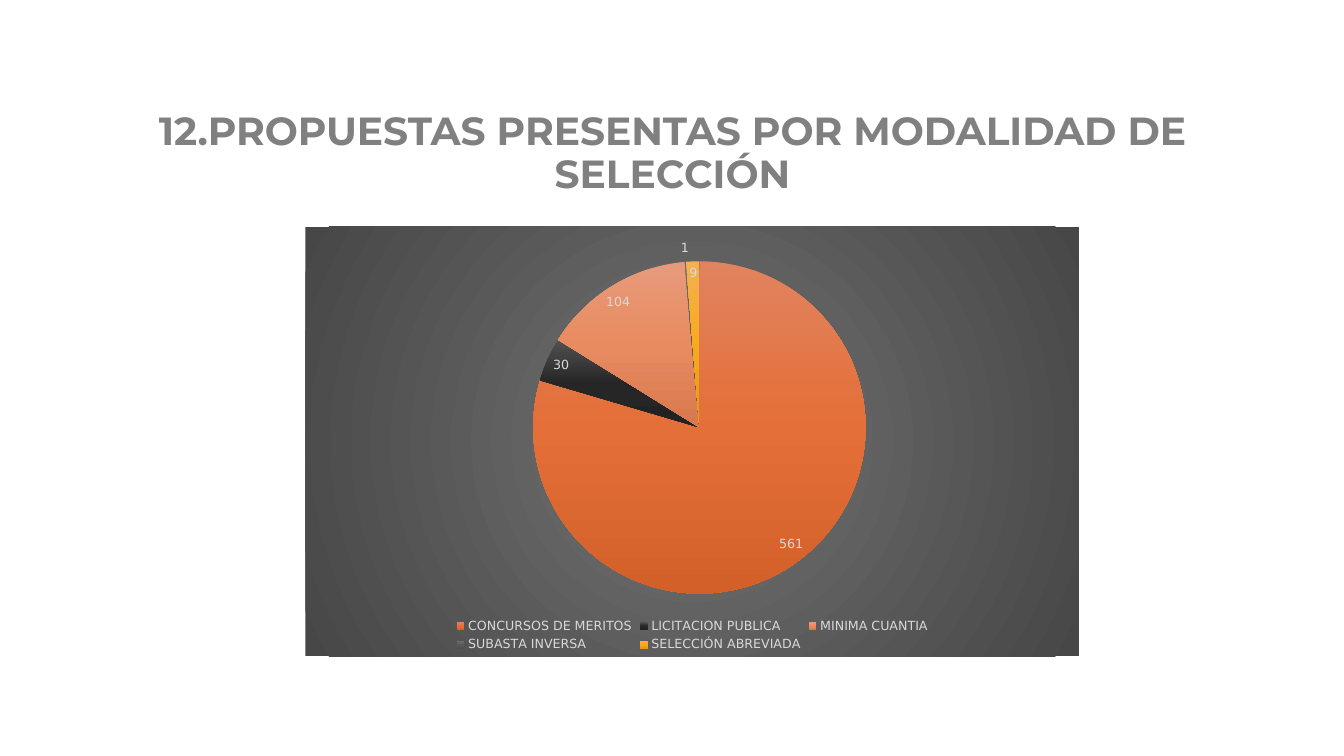
from lxml import etree
from pptx import Presentation
from pptx.chart.data import CategoryChartData
from pptx.dml.color import RGBColor
from pptx.enum import chart as charts, text
from pptx.oxml import parse_xml
from pptx.oxml.ns import nsdecls, qn
from pptx.util import Inches, Pt

TITLE_FONT = "Montserrat"
CHART_FONT = "DejaVu Sans"
LABEL_COLOR = "D9D9D9"

# Proposals and slice gradient (top, middle, bottom) for each modality
MODALITIES = [
    ("CONCURSOS DE MERITOS", 561, ("E1835F", "E46F38", "D36029")),
    ("LICITACION PUBLICA", 30, ("515151", "262626", "222222")),
    ("MINIMA CUANTIA", 104, ("E79A7B", "E98B61", "D7784F")),
    ("SUBASTA INVERSA", 1, ("6F6F6F", "595959", "4F4F4F")),
    ("SELECCIÓN ABREVIADA", 9, ("F3B152", "F9AA1B", "E59910")),
]


def color(value):
    return RGBColor.from_string(value)


def format_font(font, name, size, value, bold=False):
    font.name = name
    font.size = Pt(size)
    font.bold = bold
    font.color.rgb = color(value)


def gradient(colors, radial=False):
    """Return a gradient fill with evenly spaced stops."""
    step = 100000 // (len(colors) - 1)
    stops = "".join(
        f'<a:gs pos="{index * step}"><a:srgbClr val="{value}"/></a:gs>'
        for index, value in enumerate(colors)
    )
    if radial:
        direction = ('<a:path path="circle"><a:fillToRect l="50000" t="50000" '
                     'r="50000" b="50000"/></a:path>')
    else:
        direction = '<a:lin ang="5400000" scaled="0"/>'
    return parse_xml(f'<a:gradFill {nsdecls("a")} rotWithShape="1">'
                     f'<a:gsLst>{stops}</a:gsLst>{direction}</a:gradFill>')


def set_title(page, words):
    title = page.shapes.title
    title.left, title.top = Inches(0.92), Inches(0.99)
    title.width, title.height = Inches(11.5), Inches(1.01)
    frame = title.text_frame
    frame.word_wrap = True
    frame.auto_size = text.MSO_AUTO_SIZE.NONE
    frame.vertical_anchor = text.MSO_ANCHOR.BOTTOM
    para = frame.paragraphs[0]
    para.alignment = text.PP_ALIGN.CENTER
    para.line_spacing = 0.9
    span = para.add_run()
    span.text = words
    format_font(span.font, TITLE_FONT, 28, "808080", bold=True)


def fill_chart_area(chart, colors):
    space = chart.element
    area = parse_xml(f'<c:spPr {nsdecls("c", "a")}/>')
    area.append(gradient(colors, radial=True))
    outline = etree.SubElement(area, qn("a:ln"))
    etree.SubElement(outline, qn("a:noFill"))
    space.find(qn("c:chart")).addnext(area)


def add_pie(page):
    data = CategoryChartData()
    data.categories = [name for name, _, _ in MODALITIES]
    data.add_series("Propuestas", [count for _, count, _ in MODALITIES])
    chart = page.shapes.add_chart(
        charts.XL_CHART_TYPE.PIE, Inches(3.03), Inches(2.25),
        Inches(7.67), Inches(4.26), data).chart
    chart.has_title = False
    format_font(chart.font, CHART_FONT, 10, "262626")
    fill_chart_area(chart, ("727272", "474747"))

    # Legend
    chart.has_legend = True
    chart.legend.position = charts.XL_LEGEND_POSITION.BOTTOM
    chart.legend.include_in_layout = False
    format_font(chart.legend.font, CHART_FONT, 9, LABEL_COLOR)

    # Slices
    plot = chart.plots[0]
    plot.vary_by_categories = True
    series = plot.series[0]
    for index, (_, _, colors) in enumerate(MODALITIES):
        point = series.points[index]
        point.format.line.fill.background()
        slice_format = series._element.get_or_add_dPt_for_point(index)
        slice_format.get_or_add_spPr().insert(0, gradient(colors))

    # Value labels
    labels = series.data_labels
    labels.show_value = True
    labels.position = charts.XL_LABEL_POSITION.BEST_FIT
    format_font(labels.font, CHART_FONT, 9, LABEL_COLOR)


def main():
    deck = Presentation()
    deck.slide_width, deck.slide_height = Inches(13.33), Inches(7.5)
    page = deck.slides.add_slide(deck.slide_layouts[5])
    set_title(page, "12.PROPUESTAS PRESENTAS POR MODALIDAD DE SELECCIÓN")
    add_pie(page)
    deck.save("out.pptx")


if __name__ == "__main__":
    main()
